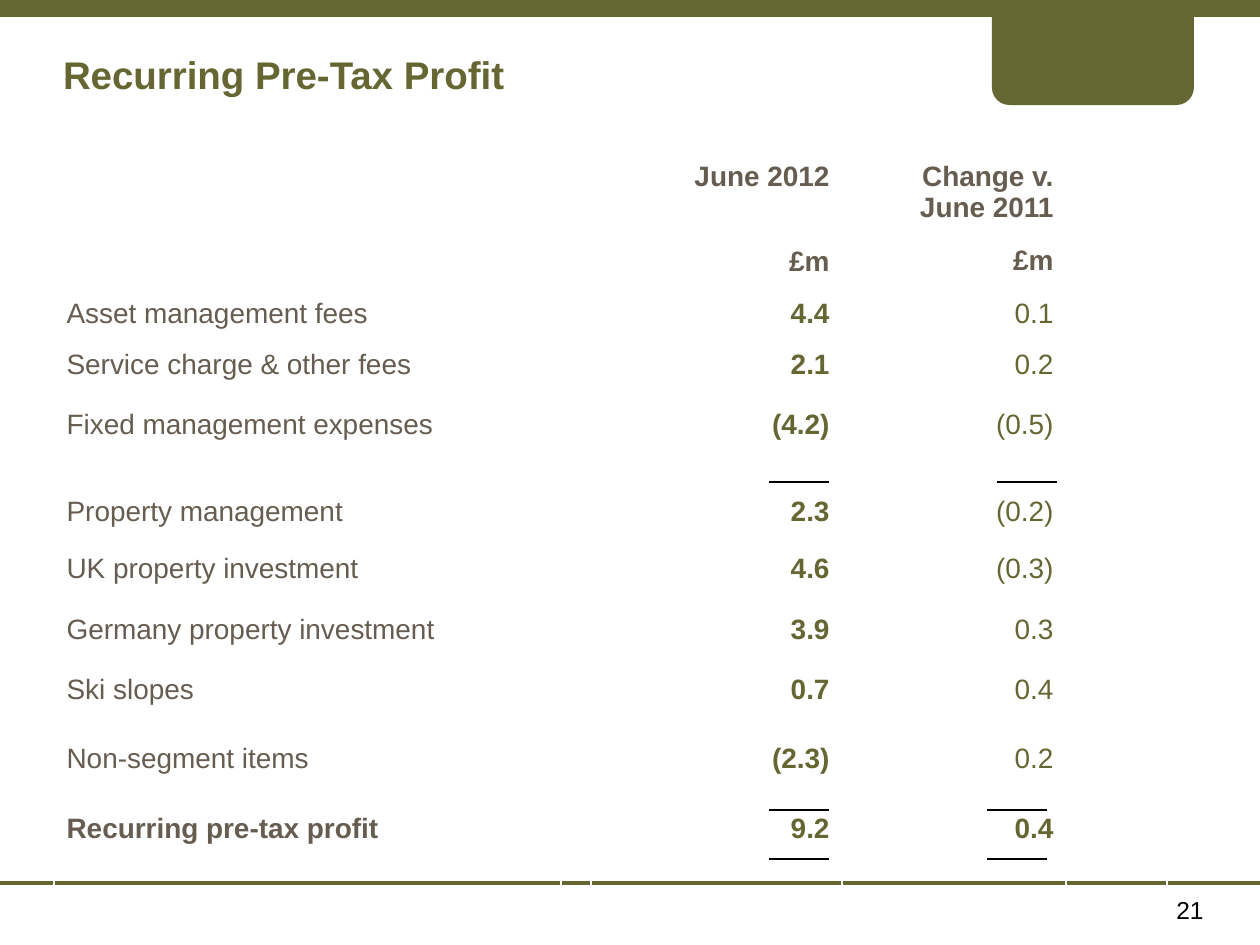
import pptx
import pptx.util
import pptx.dml.color
import pptx.enum.shapes
import pptx.enum.text
import pptx.oxml.ns
import lxml.etree

PX = 914400 / 126
OLIVE = pptx.dml.color.RGBColor(0x66, 0x66, 0x33)
TAUPE = pptx.dml.color.RGBColor(0x66, 0x5C, 0x4F)
BLACK = pptx.dml.color.RGBColor(0, 0, 0)
LEFT = pptx.enum.text.PP_ALIGN.LEFT
RIGHT = pptx.enum.text.PP_ALIGN.RIGHT


def write(para, text, size, color, bold, **formats):
    span = para.add_run()
    span.text = text
    span.font.color.rgb = color
    for name, value in {"name": "Arial", "size": pptx.util.Pt(size), "bold": bold}.items():
        setattr(span.font, name, value)
    for name, value in formats.items():
        setattr(para, name, value)


def rule(left, right, y, color, width):
    line = page.shapes.add_connector(
        pptx.enum.shapes.MSO_CONNECTOR.STRAIGHT,
        *[round(value * PX) for value in (left, y, right, y)])
    line.line.color.rgb = color
    line.line.width = pptx.util.Pt(width)
    properties = line._element.spPr
    lxml.etree.SubElement(properties, pptx.oxml.ns.qn("a:effectLst"))


deck = pptx.Presentation()
deck.slide_width = round(1260 * PX)
deck.slide_height = round(945 * PX)
page = deck.slides.add_slide(deck.slide_layouts[6])

rule(0, 1260, 883, OLIVE, 2)
tab = page.shapes.add_shape(
    pptx.enum.shapes.MSO_SHAPE.ROUNDED_RECTANGLE,
    *[round(value * PX) for value in (992, 0, 202, 105)])
tab.shadow.inherit = False
tab.fill.solid()
tab.fill.fore_color.rgb = OLIVE
tab.line.fill.background()
rule(0, 1260, 8, OLIVE, 10)

number = page.shapes.add_textbox(*[round(value * PX) for value in (1046, 889, 170, 45)])
number.text_frame.word_wrap = True
write(number.text_frame.paragraphs[0], "21", 14, BLACK, False, alignment=RIGHT)

columns = [507, 29, 251, 224, 101]
heights = [137, 51, 60, 87, 57, 61, 60, 69, 70, 82]
rows = [
    ("Asset management fees", "4.4", "0.1"),
    ("Service charge & other fees", "2.1", "0.2"),
    ("Fixed management expenses", "(4.2)", "(0.5)"),
    ("Property management", "2.3", "(0.2)"),
    ("UK property investment", "4.6", "(0.3)"),
    ("Germany property investment", "3.9", "0.3"),
    ("Ski slopes", "0.7", "0.4"),
    ("Non-segment items", "(2.3)", "0.2"),
    ("Recurring pre-tax profit", "9.2", "0.4"),
]
frame = page.shapes.add_table(
    len(heights), len(columns),
    *[round(value * PX) for value in (54, 155, sum(columns), sum(heights))])
table = frame.table
table.first_row = False
table.horz_banding = False
for column, width in zip(table.columns, columns):
    column.width = round(width * PX)
for row, height in zip(table.rows, heights):
    row.height = round(height * PX)
for cell in table.iter_cells():
    cell.fill.background()

for index, heading, gap, spacing in ((2, "June 2012", 31, 1.0), (3, "Change v. June 2011", 7, 1.3)):
    text = table.cell(0, index).text_frame
    write(text.paragraphs[0], heading, 16, TAUPE, True, alignment=RIGHT)
    write(text.add_paragraph(), "£m", 16, TAUPE, True, alignment=RIGHT,
          space_before=pptx.util.Pt(gap), line_spacing=spacing)

for index, (label, amount, change) in enumerate(rows, start=1):
    total = index == len(rows)
    for column, text, color, bold, side in (
            (0, label, TAUPE, total, LEFT),
            (2, amount, OLIVE, True, RIGHT),
            (3, change, OLIVE, total, RIGHT)):
        para = table.cell(index, column).text_frame.paragraphs[0]
        write(para, text, 16, color, bold, alignment=side)

for y, change_left in ((482, 997), (810, 987), (859, 987)):
    for left in (769, change_left):
        rule(left, left + 60, y, BLACK, 0.75)

title = page.shapes.add_textbox(*[round(value * PX) for value in (63, 38, 915, 73)])
for name, value in {
        "word_wrap": True, "margin_left": 0, "margin_top": 0, "margin_bottom": 0,
        "margin_right": round(5 * PX),
        "vertical_anchor": pptx.enum.text.MSO_ANCHOR.MIDDLE}.items():
    setattr(title.text_frame, name, value)
write(title.text_frame.paragraphs[0], "Recurring Pre-Tax Profit", 22, OLIVE, True)

deck.save("out.pptx")
